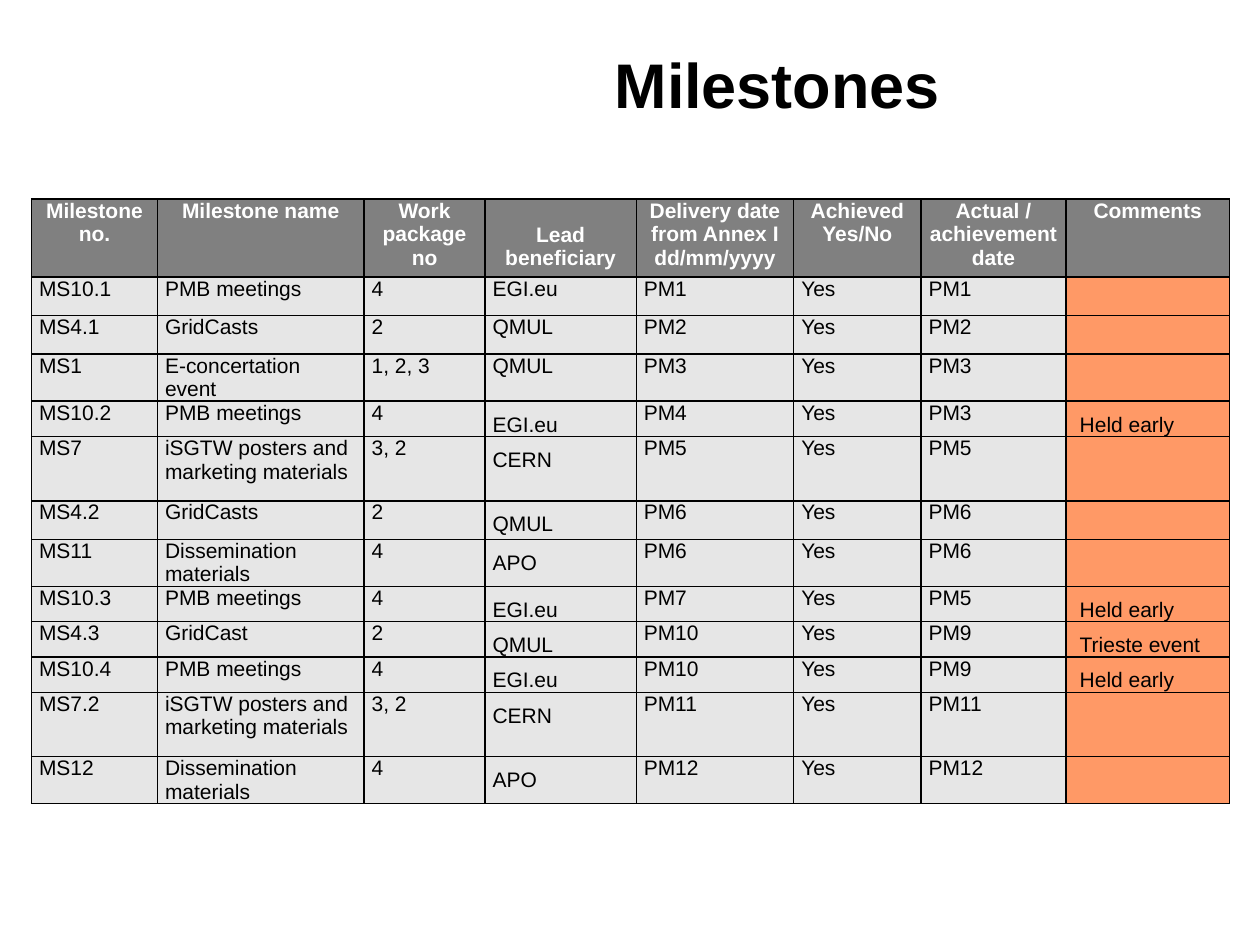
from typing import NamedTuple

from lxml.etree import SubElement
from pptx import Presentation
from pptx.dml.color import RGBColor
from pptx.enum.text import MSO_ANCHOR, PP_ALIGN
from pptx.oxml.ns import qn
from pptx.util import Inches, Pt

BLACK = RGBColor(0x00, 0x00, 0x00)
WHITE = RGBColor(0xFF, 0xFF, 0xFF)
GREY = RGBColor(0x80, 0x80, 0x80)
PALE = RGBColor(0xE6, 0xE6, 0xE6)
ORANGE = RGBColor(0xFF, 0x99, 0x66)

LEAD, NOTE = 3, 7
PAD = 0.06
SHORT, WRAPPED, TALL = 0.28, 0.37, 0.51


class Column(NamedTuple):
    head: str
    width: float


class Milestone(NamedTuple):
    code: str
    name: str
    work: str
    lead: str
    due: str
    done: str
    note: str = ""
    height: float = SHORT
    spacing: float = 1.5

    def texts(self) -> list[str]:
        return [self.code, self.name, self.work, self.lead,
                self.due, "Yes", self.done, self.note]


class Style(NamedTuple):
    fill: RGBColor
    font: dict
    align: PP_ALIGN = PP_ALIGN.LEFT
    spacing: float = 1.0
    left: float = PAD
    top: float = 0


COLUMNS = [
    Column("Milestone\nno.", 1),
    Column("Milestone name", 1.64),
    Column("Work package no", 0.96),
    Column("Lead beneficiary", 1.2),
    Column("Delivery date from Annex I\ndd/mm/yyyy", 1.25),
    Column("Achieved\vYes/No", 1.01),
    Column("Actual / achievement date", 1.15),
    Column("Comments", 1.3),
]

POSTERS = "iSGTW posters and marketing materials"
PAPERS = "Dissemination materials"
MEETING = "PMB meetings"
EARLY = "Held early"

ROWS = [
    Milestone("MS10.1", MEETING, "4", "EGI.eu", "PM1", "PM1", spacing=1.0),
    Milestone("MS4.1", "GridCasts", "2", "QMUL", "PM2", "PM2", spacing=1.0),
    Milestone("MS1", "E-concertation event", "1, 2, 3", "QMUL", "PM3", "PM3",
              height=WRAPPED, spacing=1.0),
    Milestone("MS10.2", MEETING, "4", "EGI.eu", "PM4", "PM3", EARLY),
    Milestone("MS7", POSTERS, "3, 2", "CERN", "PM5", "PM5", height=TALL),
    Milestone("MS4.2", "GridCasts", "2", "QMUL", "PM6", "PM6"),
    Milestone("MS11", PAPERS, "4", "APO", "PM6", "PM6", height=WRAPPED),
    Milestone("MS10.3", MEETING, "4", "EGI.eu", "PM7", "PM5", EARLY),
    Milestone("MS4.3", "GridCast", "2", "QMUL", "PM10", "PM9", "Trieste event"),
    Milestone("MS10.4", MEETING, "4", "EGI.eu", "PM10", "PM9", EARLY),
    Milestone("MS7.2", POSTERS, "3, 2", "CERN", "PM11", "PM11", height=TALL),
    Milestone("MS12", PAPERS, "4", "APO", "PM12", "PM12", height=WRAPPED),
]

BODY = {"name": "Arial", "size": Pt(12), "bold": False}
HEAD = {**BODY, "bold": True}
TITLE = {**HEAD, "size": Pt(36)}


def apply(target, values: dict) -> None:
    for key, value in values.items():
        setattr(target, key, value)


def write(frame, text: str, font: dict, color: RGBColor,
          align: PP_ALIGN, spacing: float = 1.0) -> None:
    frame.text = text
    for para in frame.paragraphs:
        apply(para, {"alignment": align, "line_spacing": spacing})
        for run in para.runs:
            apply(run.font, font)
            run.font.color.rgb = color


def border(cell) -> None:
    props = cell._tc.get_or_add_tcPr()
    for side in ("lnL", "lnR", "lnT", "lnB"):
        line = SubElement(props, qn(f"a:{side}"), w=str(Pt(1)))
        solid = SubElement(line, qn("a:solidFill"))
        SubElement(solid, qn("a:srgbClr"), val=str(BLACK))


def draw_cell(cell, text: str, style: Style) -> None:
    apply(cell, {
        "margin_left": Inches(style.left),
        "margin_right": Inches(PAD),
        "margin_top": Inches(style.top),
        "margin_bottom": 0,
        "vertical_anchor": MSO_ANCHOR.TOP,
    })
    border(cell)
    cell.fill.solid()
    cell.fill.fore_color.rgb = style.fill
    if text:
        color = WHITE if style.fill == GREY else BLACK
        write(cell.text_frame, text, style.font, color,
              style.align, style.spacing)


def draw_title(slide) -> None:
    title = slide.shapes.title
    apply(title, {"left": Inches(1.67), "top": Inches(0.04),
                  "width": Inches(9), "height": Inches(1.25)})
    title.text_frame.vertical_anchor = MSO_ANCHOR.MIDDLE
    write(title.text_frame, "Milestones", TITLE, BLACK, PP_ALIGN.CENTER)


def draw_table(slide) -> None:
    heights = [0.62] + [row.height for row in ROWS]
    frame = slide.shapes.add_table(
        len(heights), len(COLUMNS), Inches(0.25), Inches(1.58),
        Inches(9.5), Inches(sum(heights)))
    table = frame.table
    apply(table, {"first_row": False, "horz_banding": False})
    for line, height in zip(table.rows, heights):
        line.height = Inches(height)
    for index, column in enumerate(COLUMNS):
        table.columns[index].width = Inches(column.width)
        top = 0.19 if index == LEAD else 0
        draw_cell(table.cell(0, index), column.head,
                  Style(GREY, HEAD, PP_ALIGN.CENTER, top=top))
    for number, row in enumerate(ROWS, 1):
        styles = {
            LEAD: Style(PALE, BODY, spacing=row.spacing),
            NOTE: Style(ORANGE, BODY, spacing=1.5, left=0.11),
        }
        for index, text in enumerate(row.texts()):
            draw_cell(table.cell(number, index), text,
                      styles.get(index, Style(PALE, BODY)))


def main() -> None:
    deck = Presentation()
    apply(deck, {"slide_width": Inches(10), "slide_height": Inches(7.5)})
    slide = deck.slides.add_slide(deck.slide_layouts[5])
    draw_title(slide)
    draw_table(slide)
    deck.save("out.pptx")


if __name__ == "__main__":
    main()
